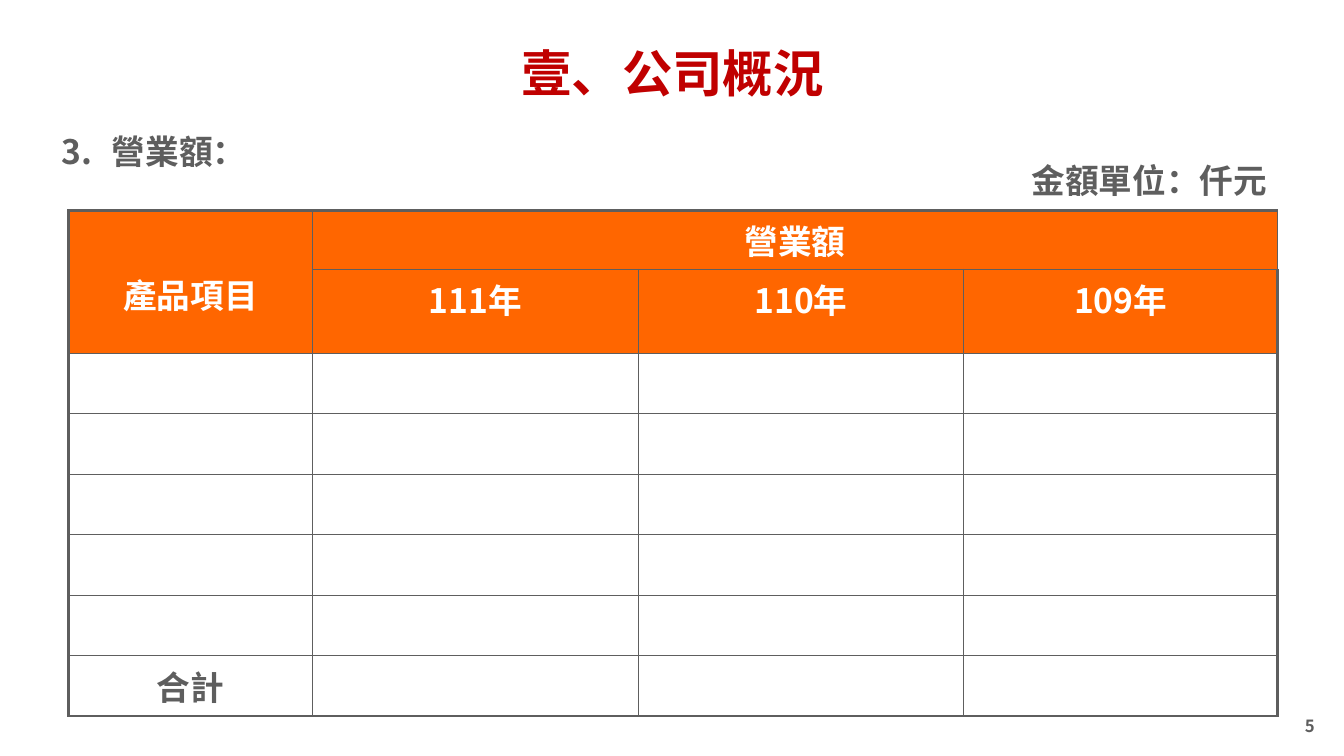
import pptx
import pptx.util
import pptx.dml.color
import pptx.enum.text
import pptx.oxml.ns
from lxml import etree

Inches = pptx.util.Inches
Pt = pptx.util.Pt
RGBColor = pptx.dml.color.RGBColor
ALIGN = pptx.enum.text.PP_ALIGN
ANCHOR = pptx.enum.text.MSO_ANCHOR
qn = pptx.oxml.ns.qn

GREY = RGBColor(0x5E, 0x5E, 0x5E)
RED = RGBColor(0xC0, 0x00, 0x00)
ORANGE = RGBColor(0xFF, 0x66, 0x00)
WHITE = RGBColor(0xFF, 0xFF, 0xFF)
FONT = "Noto Sans CJK SC"


def write(frame, text, size, color, align=ALIGN.CENTER):
    paragraph = frame.paragraphs[0]
    paragraph.text = text
    paragraph.alignment = align
    font = paragraph.font
    font.name, font.size, font.bold = FONT, Pt(size), True
    font.color.rgb = color
    latin = paragraph._p.pPr.find(qn("a:defRPr")).find(qn("a:latin"))
    east_asian = etree.Element(qn("a:ea"), typeface=FONT)
    latin.addnext(east_asian)
    return paragraph


def place(shape, left, top, width, height, inset_x, inset_y, wrap):
    shape.left, shape.top = Inches(left), Inches(top)
    shape.width, shape.height = Inches(width), Inches(height)
    frame = shape.text_frame
    frame.margin_left = frame.margin_right = Inches(inset_x)
    frame.margin_top = frame.margin_bottom = Inches(inset_y)
    frame.word_wrap = wrap
    frame.auto_size = pptx.enum.text.MSO_AUTO_SIZE.NONE
    return frame


presentation = pptx.Presentation()
presentation.slide_width = Inches(13.33)
presentation.slide_height = Inches(7.5)
slide = presentation.slides.add_slide(presentation.slide_layouts[1])

# Title
title = place(slide.shapes.title, 5.1, 0.36, 3.14, 0.72, 0.06, 0.06, False)
title.vertical_anchor = ANCHOR.MIDDLE
write(title, "壹、公司概況", 36, RED)

# Numbered heading, continuing at 3
heading = place(slide.placeholders[1], -0.33, 1.21, 2.85, 0.57, 0.04, 0.05, True)
heading_line = heading.paragraphs[0]
heading_line.line_spacing = 1.1
heading_line.space_before = Pt(0)
heading_props = heading_line._p.get_or_add_pPr()
heading_props.set("marL", str(Inches(1.4)))
heading_props.set("indent", str(Inches(-0.5)))
number_color = etree.SubElement(heading_props, qn("a:buClr"))
etree.SubElement(number_color, qn("a:srgbClr"), val=str(GREY))
etree.SubElement(heading_props, qn("a:buFont"), typeface=FONT)
etree.SubElement(heading_props, qn("a:buAutoNum"), type="arabicPeriod", startAt="3")
write(heading, "營業額：", 24, GREY, ALIGN.LEFT)

# Unit note above the table
unit = place(slide.shapes.add_textbox(0, 0, 0, 0), 10.12, 1.54, 2.56, 0.5, 0.1, 0.05, False)
write(unit, "金額單位：仟元", 24, GREY)

# Page number
page = place(slide.shapes.add_textbox(0, 0, 0, 0), 12.83, 7.05, 0.32, 0.31, 0.06, 0.06, False)
page.vertical_anchor = ANCHOR.BOTTOM
write(page, "5", 12, GREY)

# Turnover table: two header rows, five product rows, one total row
column_widths = [2.42, 3.23, 3.23, 3.11]
row_heights = [0.58, 0.83] + [0.6] * 6
last_row, last_column = len(row_heights) - 1, len(column_widths) - 1
turnover = slide.shapes.add_table(
    len(row_heights), len(column_widths), Inches(0.68), Inches(2.09),
    Inches(sum(column_widths)), Inches(sum(row_heights))).table
for column, width in zip(turnover.columns, column_widths):
    column.width = Inches(width)
for row, height in zip(turnover.rows, row_heights):
    row.height = Inches(height)

# Heavy outer frame, thin inner lines
for r in range(last_row + 1):
    for c in range(last_column + 1):
        cell = turnover.cell(r, c)
        outer_edges = {"lnL": c == 0, "lnR": c == last_column,
                       "lnT": r == 0, "lnB": r == last_row}
        cell_props = cell._tc.get_or_add_tcPr()
        for edge, is_outer in outer_edges.items():
            border = etree.SubElement(cell_props, qn("a:" + edge),
                                      w=str(Pt(2.25 if is_outer else 1)))
            border_fill = etree.SubElement(border, qn("a:solidFill"))
            etree.SubElement(border_fill, qn("a:srgbClr"), val=str(GREY))
        cell.fill.solid()
        cell.fill.fore_color.rgb = ORANGE if r < 2 else WHITE

turnover.cell(0, 0).merge(turnover.cell(1, 0))
turnover.cell(0, 1).merge(turnover.cell(0, last_column))

# Table labels
product = turnover.cell(0, 0)
product.vertical_anchor = ANCHOR.MIDDLE
write(product.text_frame, "產品項目", 24, WHITE).line_spacing = 1.5
write(turnover.cell(0, 1).text_frame, "營業額", 24, WHITE)
for c, year in enumerate(["111年", "110年", "109年"], start=1):
    write(turnover.cell(1, c).text_frame, year, 24, WHITE)
total = turnover.cell(last_row, 0)
total.vertical_anchor = ANCHOR.MIDDLE
write(total.text_frame, "合計", 24, GREY)

presentation.save("out.pptx")
